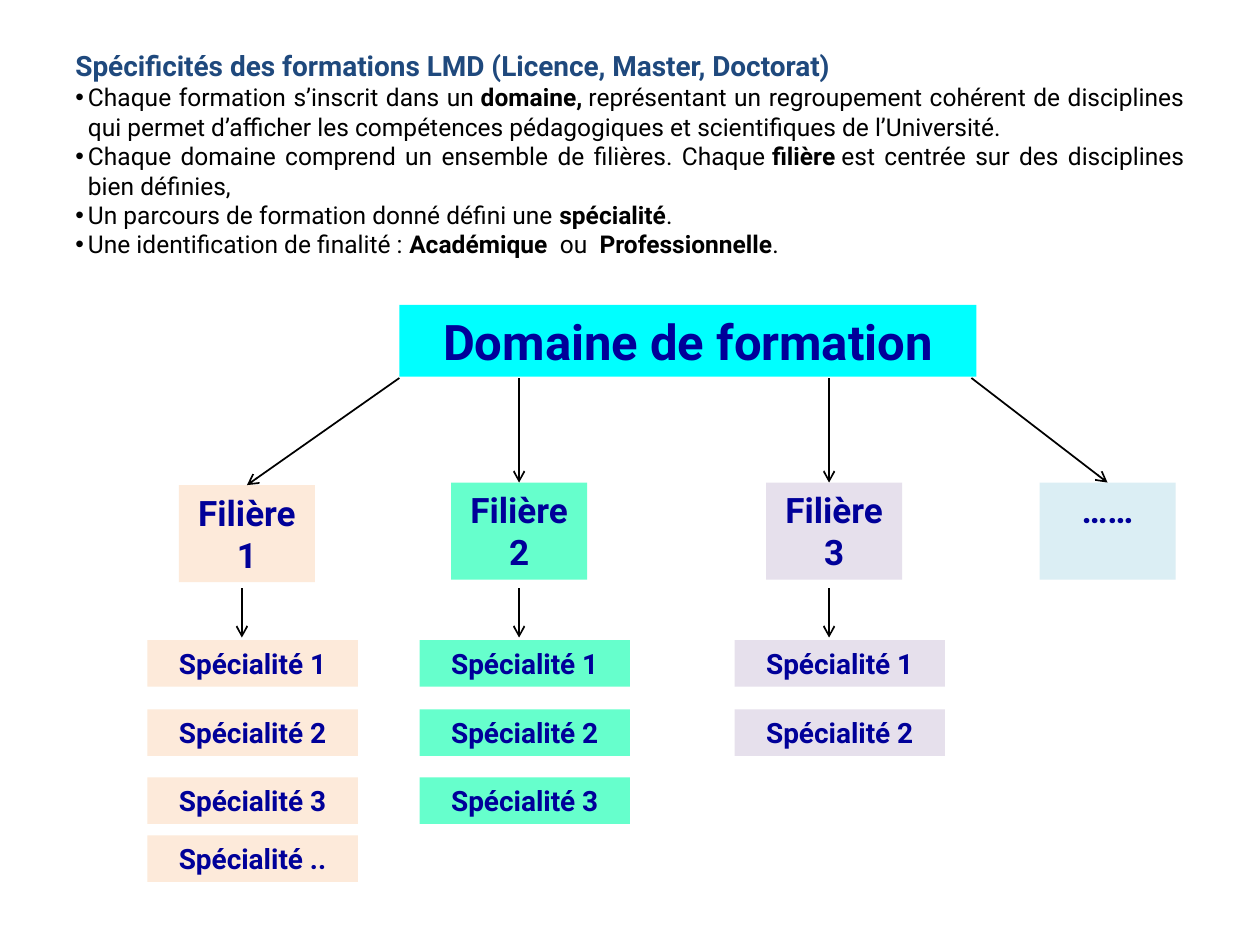
from pptx import Presentation
from pptx.dml.color import RGBColor
from pptx.enum.shapes import MSO_CONNECTOR, MSO_SHAPE
from pptx.enum.text import MSO_ANCHOR, PP_ALIGN
from pptx.oxml.ns import qn
from pptx.util import Inches, Pt
from lxml import etree

RECT, LINE = MSO_SHAPE.RECTANGLE, MSO_CONNECTOR.STRAIGHT
TOP, MIDDLE = MSO_ANCHOR.TOP, MSO_ANCHOR.MIDDLE
CENTER, JUSTIFY = PP_ALIGN.CENTER, PP_ALIGN.JUSTIFY
FONT, NAVY, BLACK = "Roboto", "000099", "000000"

TITLE = "Spécificités des formations LMD (Licence, Master, Doctorat)"
POINTS = [
    ["Chaque formation s’inscrit dans un\u00a0", "domaine,",
     "\u00a0représentant un regroupement cohérent de disciplines qui permet "
     "d’afficher les compétences pédagogiques et scientifiques de l’Université."],
    ["Chaque domaine comprend un ensemble de filières. Chaque\u00a0", "filière",
     "\u00a0est centrée sur des disciplines bien définies,"],
    ["Un parcours de formation donné défini une\u00a0", "spécialité", "."],
    ["Une identification de finalité\u00a0:\u00a0", "Académique ",
     "\u00a0ou \u00a0", "Professionnelle", "."],
]
DOMAIN = "Domaine de formation"
BRANCHES = [
    {"name": "Filière 1", "fill": "FDEADA", "left": 1.42, "top": 3.85,
     "start": 3.17, "end": 1.96, "stem": 1.92, "items": ["1", "2", "3", ".."]},
    {"name": "Filière 2", "fill": "66FFCC", "left": 3.58, "top": 3.83,
     "start": 4.12, "end": 4.12, "stem": 4.12, "items": ["1", "2", "3"]},
    {"name": "Filière 3", "fill": "E6E0EC", "left": 6.08, "top": 3.83,
     "start": 6.58, "end": 6.58, "stem": 6.58, "items": ["1", "2"]},
    {"name": "……", "fill": "DBEEF4", "left": 8.25, "top": 3.83,
     "start": 7.71, "end": 8.79, "stem": None, "items": []},
]
ROWS = [5.08, 5.63, 6.17, 6.63]

deck = Presentation()
deck.slide_width, deck.slide_height = Inches(10), Inches(7.5)
slide = deck.slides.add_slide(deck.slide_layouts[6])


def color(code):
    return RGBColor.from_string(code)


def style(run, size, code, bold):
    run.font.name, run.font.size, run.font.bold = FONT, Pt(size), bold
    run.font.color.rgb = color(code)


def box(text, left, top, width, height, fill, size):
    shape = slide.shapes.add_shape(RECT, *map(Inches, (left, top, width, height)))
    shape.shadow.inherit = False
    shape.fill.solid()
    shape.fill.fore_color.rgb = color(fill)
    shape.line.fill.background()
    frame = shape.text_frame
    frame.word_wrap, frame.vertical_anchor = True, TOP
    frame.text = text
    frame.paragraphs[0].alignment = CENTER
    style(frame.paragraphs[0].runs[0], size, NAVY, True)


def arrow(*ends):
    line = slide.shapes.add_connector(LINE, *map(Inches, ends))
    line.line.color.rgb, line.line.width = color(BLACK), Pt(1)
    etree.SubElement(line.line._get_or_add_ln(), qn("a:tailEnd"), type="arrow")
    etree.SubElement(line._element.spPr, qn("a:effectLst"))


def bullet(para):
    props = para._p.get_or_add_pPr()
    props.set("marL", str(Inches(0.1)))
    props.set("indent", str(-Inches(0.1)))
    etree.SubElement(props, qn("a:buFont"), typeface="Arial")
    etree.SubElement(props, qn("a:buChar"), char="•")


intro = slide.shapes.add_textbox(*map(Inches, (0.5, 0.33, 9, 1.78))).text_frame
intro.word_wrap, intro.vertical_anchor = True, MIDDLE
intro.text = TITLE
intro.paragraphs[0].alignment = JUSTIFY
style(intro.paragraphs[0].runs[0], 16, "1F497D", True)
for point in POINTS:
    para = intro.add_paragraph()
    para.alignment = JUSTIFY
    bullet(para)
    for i, part in enumerate(point):
        run = para.add_run()
        run.text = part
        style(run, 14, BLACK, i % 2 == 1)

box(DOMAIN, 3.17, 2.42, 4.58, 0.57, "00FFFF", 28)
for branch in BRANCHES:
    left, top, fill = branch["left"], branch["top"], branch["fill"]
    box(branch["name"], left, top, 1.08, 0.77, fill, 20)
    arrow(branch["start"], 3, branch["end"], top)
    for mark, row in zip(branch["items"], ROWS):
        box("Spécialité " + mark, left - 0.25, row, 1.67, 0.37, fill, 16)
    if branch["stem"]:
        arrow(branch["stem"], 4.67, branch["stem"], 5.06)

deck.save("out.pptx")
